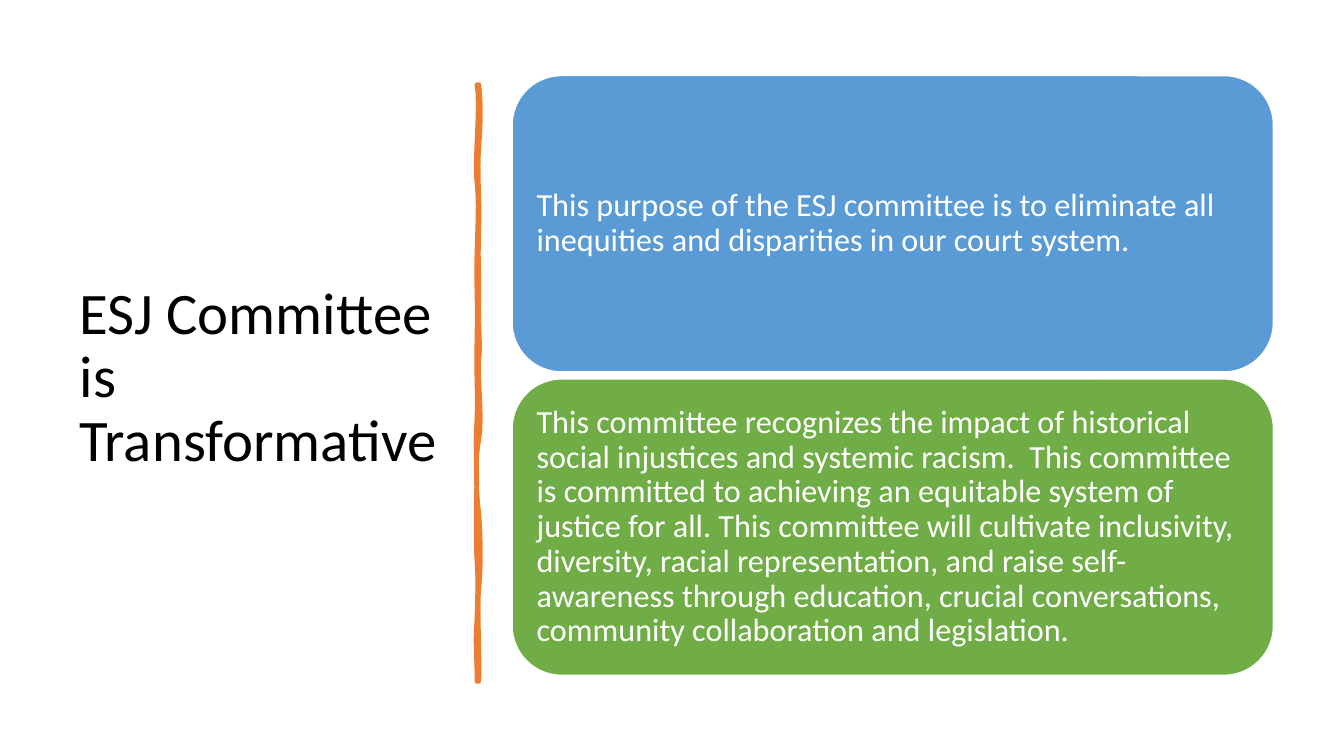
from pptx import Presentation
from pptx.dml.color import RGBColor
from pptx.enum.shapes import MSO_SHAPE
from pptx.enum.text import MSO_ANCHOR, MSO_AUTO_SIZE, PP_ALIGN
from pptx.util import Inches, Pt

ROUNDED = MSO_SHAPE.ROUNDED_RECTANGLE
MIDDLE = MSO_ANCHOR.MIDDLE
NO_AUTOFIT = MSO_AUTO_SIZE.NONE
LEFT = PP_ALIGN.LEFT

FONT = "Calibri"
WHITE = "FFFFFF"
ORANGE = "ED7D31"

CARD_LEFT, CARD_TOP, CARD_WIDTH, CARD_HEIGHT = 5.08, 0.75, 7.55, 2.94
CARD_PITCH = 3.01
CARDS = [
    ("5B9BD5", "This purpose of the ESJ committee is to eliminate all inequities "
     "and disparities in our court system."),
    ("70AD47", "This committee recognizes the impact of historical social injustices "
     "and systemic racism.  This committee is committed to achieving an equitable "
     "system of justice for all. This committee will cultivate inclusivity, "
     "diversity, racial representation, and raise self-awareness through education, "
     "crucial conversations, community collaboration and legislation."),
]

# Each edge: its x, its start y, and curves of (bend x, y, bend x, y, end y)
DIVIDER_EDGES = [
    (4.75, 0.84, [
        (4.77, 1.02, 4.77, 1.19, 1.46), (4.73, 1.73, 4.76, 1.95, 2.26),
        (4.74, 2.57, 4.75, 2.62, 2.94), (4.74, 3.25, 4.77, 3.42, 3.56),
        (4.73, 3.70, 4.79, 4.14, 4.36), (4.71, 4.57, 4.72, 4.84, 5.10),
        (4.77, 5.36, 4.77, 5.64, 5.84), (4.73, 6.03, 4.76, 6.50, 6.76)]),
    (4.73, 6.76, [
        (4.73, 6.46, 4.71, 6.44, 6.13), (4.74, 5.83, 4.74, 5.70, 5.57),
        (4.72, 5.44, 4.72, 4.95, 4.77), (4.73, 4.59, 4.71, 4.45, 4.15),
        (4.74, 3.86, 4.72, 3.73, 3.35), (4.74, 2.98, 4.72, 2.81, 2.50),
        (4.74, 2.18, 4.75, 2.00, 1.81), (4.70, 1.63, 4.77, 1.04, 0.84)]),
]
CURVE_STEPS = 8


def color(hex_value):
    return RGBColor.from_string(hex_value)


def paint(shape, fill, line, line_width):
    shape.shadow.inherit = False
    shape.fill.solid()
    shape.fill.fore_color.rgb = color(fill)
    shape.line.color.rgb = color(line)
    shape.line.width = Pt(line_width)


def write_text(shape, text, size, text_color):
    frame = shape.text_frame
    frame.text = text
    frame_format = {"word_wrap": True, "auto_size": NO_AUTOFIT,
                    "vertical_anchor": MIDDLE}
    for side in ("left", "right", "top", "bottom"):
        frame_format[f"margin_{side}"] = Inches(0.1)
    for name, value in frame_format.items():
        setattr(frame, name, value)
    paragraph = frame.paragraphs[0]
    paragraph.alignment = LEFT
    paragraph.line_spacing = 0.9
    font = paragraph.runs[0].font
    for name, value in {"name": FONT, "size": Pt(size), "bold": False}.items():
        setattr(font, name, value)
    font.color.rgb = color(text_color)


def add_title(slide, text):
    title = slide.shapes.title
    bounds = {"left": 0.69, "top": 0.7, "width": 3.74, "height": 6.11}
    for name, value in bounds.items():
        setattr(title, name, Inches(value))
    write_text(title, text, 42, "000000")


def bezier(start, bend_1, bend_2, end, t):
    u = 1 - t
    return u**3 * start + 3 * u * u * t * bend_1 + 3 * u * t * t * bend_2 + t**3 * end


def edge_points(x, y, curves):
    points = [(Inches(x), Inches(y))]
    for x_1, y_1, x_2, y_2, end_y in curves:
        for step in range(1, CURVE_STEPS + 1):
            t = step / CURVE_STEPS
            points.append((Inches(bezier(x, x_1, x_2, x, t)),
                           Inches(bezier(y, y_1, y_2, end_y, t))))
        y = end_y
    return points


def add_wavy_divider(slide):
    points = [point for edge in DIVIDER_EDGES for point in edge_points(*edge)]
    builder = slide.shapes.build_freeform(*points[0])
    builder.add_line_segments(points[1:], close=True)
    paint(builder.convert_to_shape(), ORANGE, ORANGE, 3.25)


def add_card(slide, top, fill, text):
    card = slide.shapes.add_shape(ROUNDED, Inches(CARD_LEFT), Inches(top),
                                  Inches(CARD_WIDTH), Inches(CARD_HEIGHT))
    paint(card, fill, WHITE, 1)
    write_text(card, text, 23, WHITE)


def main():
    presentation = Presentation()
    presentation.slide_width = Inches(13.33)
    presentation.slide_height = Inches(7.5)
    title_only = presentation.slide_layouts.get_by_name("Title Only")
    slide = presentation.slides.add_slide(title_only)
    add_title(slide, "ESJ Committee is Transformative")
    add_wavy_divider(slide)
    for index, (fill, text) in enumerate(CARDS):
        add_card(slide, CARD_TOP + index * CARD_PITCH, fill, text)
    presentation.save("out.pptx")


if __name__ == "__main__":
    main()
